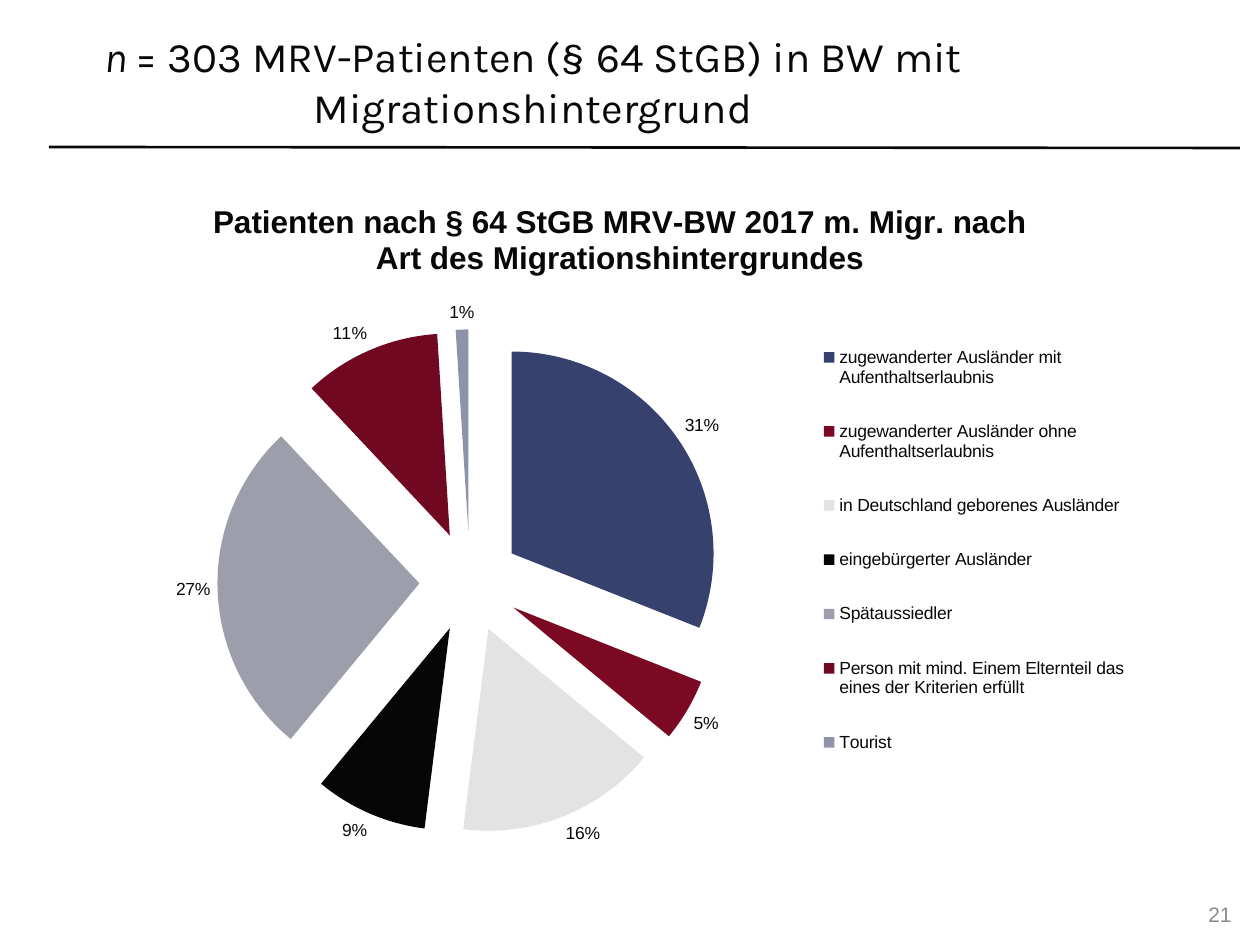
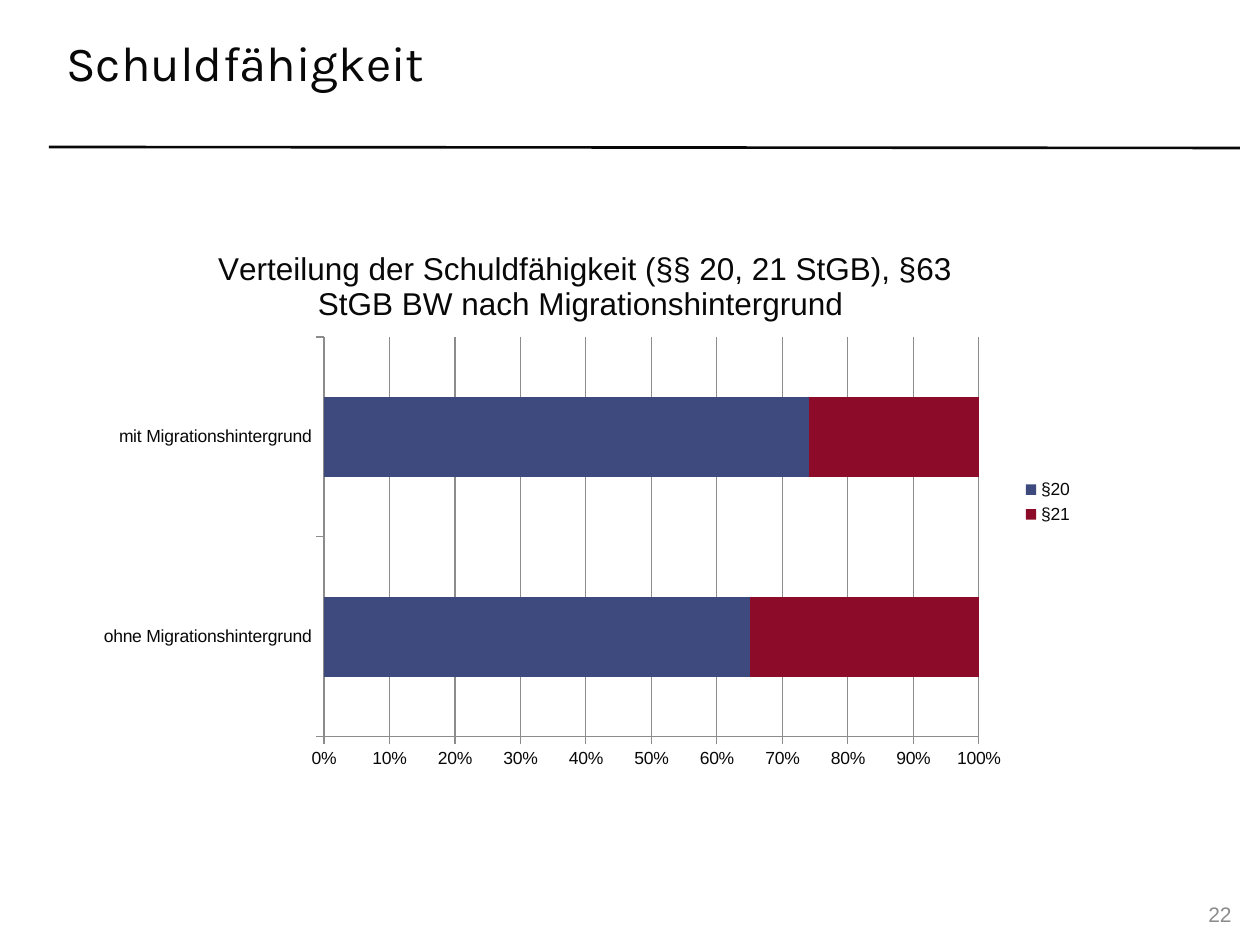
from lxml.etree import SubElement
from pptx import Presentation
from pptx.chart.data import CategoryChartData
from pptx.dml.color import RGBColor
from pptx.enum.chart import XL_CHART_TYPE, XL_LABEL_POSITION, XL_LEGEND_POSITION, XL_TICK_MARK
from pptx.enum.shapes import MSO_CONNECTOR
from pptx.enum.text import MSO_ANCHOR, PP_ALIGN
from pptx.oxml import parse_xml
from pptx.oxml.ns import nsdecls, qn
from pptx.util import Emu, Pt

INK = RGBColor(0x08, 0x08, 0x08)
GRAY = RGBColor(0x8C, 0x8C, 0x8C)
BLUE = RGBColor(0x3E, 0x4A, 0x7D)
RED = RGBColor(0x8C, 0x0B, 0x29)
SLICE_COLORS = [
    RGBColor(0x37, 0x41, 0x6E), RGBColor(0x7B, 0x09, 0x24), RGBColor(0xE3, 0xE3, 0xE3),
    RGBColor(0x06, 0x06, 0x06), RGBColor(0x9C, 0x9E, 0xAB), RGBColor(0x6F, 0x08, 0x20),
    RGBColor(0x8F, 0x93, 0xA9),
]
TITLE_FONT = "Karla"
BODY_FONT = "Arial"
PX_PER_INCH = 126
PIE_BOX = (94, 175, 1052, 694)
BARS_BOX = (84, 224, 1002, 556)


def px(*lengths):
    return [Emu(round(length * 914400 / PX_PER_INCH)) for length in lengths]


def place(parent, index, chart_box, x, y, w, h, inner=False):
    """Fix a plot area or legend at a place on the slide, given in px."""
    old = parent.find(qn("c:layout"))
    if old is not None:
        parent.remove(old)
    left, top, width, height = chart_box
    target = '<c:layoutTarget val="inner"/>' if inner else ""
    parent.insert(index, parse_xml(
        f'<c:layout {nsdecls("c")}><c:manualLayout>{target}'
        '<c:xMode val="edge"/><c:yMode val="edge"/>'
        f'<c:x val="{(x - left) / width:.4f}"/><c:y val="{(y - top) / height:.4f}"/>'
        f'<c:w val="{w / width:.4f}"/><c:h val="{h / height:.4f}"/>'
        '</c:manualLayout></c:layout>'))


prs = Presentation()
prs.slide_width, prs.slide_height = px(1260, 945)

# Chart data
origin_title = "Patienten nach § 64 StGB MRV-BW 2017 m. Migr. nach Art des Migrationshintergrundes"
origins = CategoryChartData(number_format="0%")
origins.categories = [
    "zugewanderter Ausländer mit Aufenthaltserlaubnis",
    "zugewanderter Ausländer ohne Aufenthaltserlaubnis",
    "in Deutschland geborenes Ausländer",
    "eingebürgerter Ausländer",
    "Spätaussiedler",
    "Person mit mind. Einem Elternteil das eines der Kriterien erfüllt",
    "Tourist",
]
origins.add_series(origin_title, [0.31, 0.05, 0.16, 0.09, 0.27, 0.11, 0.01])

culpability = CategoryChartData()
culpability.categories = ["ohne Migrationshintergrund", "mit Migrationshintergrund"]
culpability.add_series("§20", [65, 74])
culpability.add_series("§21", [35, 26])

# Title runs, title size, alignment, title box, chart type, data, chart box, chart title, bold
pages = [
    (["n ", "= 303 MRV-Patienten (§ 64 StGB) in BW mit Migrationshintergrund"], 24,
     PP_ALIGN.CENTER, (64, 45, 938, 72), XL_CHART_TYPE.PIE, origins,
     PIE_BOX, origin_title, True),
    (["Schuldfähigkeit"], 28,
     PP_ALIGN.LEFT, (54, 26, 938, 72), XL_CHART_TYPE.BAR_STACKED_100, culpability,
     BARS_BOX,
     "Verteilung der Schuldfähigkeit (§§ 20, 21 StGB), §63 StGB BW nach Migrationshintergrund ",
     False),
]

charts = []
for number, page in enumerate(pages, start=21):
    parts, size, align, title_box, kind, data, chart_box, heading, bold = page
    slide = prs.slides.add_slide(prs.slide_layouts[6])

    # Rule under the title
    rule = slide.shapes.add_connector(MSO_CONNECTOR.STRAIGHT, *px(1240, 148, 49, 147))
    rule.line.color.rgb = INK
    rule.line.width = Pt(1.5)
    SubElement(rule._element.spPr, qn("a:effectLst"))

    # Title
    title = slide.shapes.add_textbox(*px(*title_box)).text_frame
    title.word_wrap = True
    title.vertical_anchor = MSO_ANCHOR.MIDDLE
    title.paragraphs[0].alignment = align
    for part in parts:
        run = title.paragraphs[0].add_run()
        run.text = part
        run.font.name = TITLE_FONT
        run.font.size = Pt(size)
        run.font.color.rgb = INK
        run.font.italic = part == "n "

    # Page number
    footer = slide.shapes.add_textbox(*px(1194, 888, 50, 52)).text_frame
    footer.word_wrap = True
    footer.vertical_anchor = MSO_ANCHOR.MIDDLE
    footer.text = str(number)
    footer.paragraphs[0].alignment = PP_ALIGN.RIGHT
    page_font = footer.paragraphs[0].runs[0].font
    page_font.name = BODY_FONT
    page_font.size = Pt(12)
    page_font.color.rgb = GRAY

    # Chart with heading and legend
    chart = slide.shapes.add_chart(kind, *px(*chart_box), data).chart
    chart.font.name = BODY_FONT
    chart.font.size = Pt(10)
    chart.font.color.rgb = INK
    chart.has_title = True
    chart.chart_title.include_in_layout = False
    chart.chart_title.text_frame.text = heading
    heading_font = chart.chart_title.text_frame.paragraphs[0].runs[0].font
    heading_font.name = BODY_FONT
    heading_font.size = Pt(18)
    heading_font.bold = bold
    heading_font.color.rgb = INK
    chart.has_legend = True
    chart.legend.position = XL_LEGEND_POSITION.RIGHT
    chart.legend.include_in_layout = False
    charts.append(chart)

pie, bars = charts

# Exploded pie slices
place(pie._chartSpace.chart.plotArea, 0, PIE_BOX, 268, 380, 404, 404, inner=True)
place(pie.legend._element, 1, PIE_BOX, 816, 313, 316, 474)
slices = pie.plots[0].series[0]
for index, color in enumerate(SLICE_COLORS):
    fill = slices.points[index].format.fill
    fill.solid()
    fill.fore_color.rgb = color
for point in slices._element.findall(qn("c:dPt")):
    point.find(qn("c:spPr")).addprevious(parse_xml(f'<c:explosion {nsdecls("c")} val="25"/>'))
pie.plots[0].vary_by_categories = True
pie.plots[0].has_data_labels = True
shares = pie.plots[0].data_labels
shares.show_value = True
shares.show_percentage = False
shares.number_format = "0%"
shares.number_format_is_linked = False
shares.position = XL_LABEL_POSITION.OUTSIDE_END

# Stacked bars
place(bars._chartSpace.chart.plotArea, 0, BARS_BOX, 324, 337, 655, 400, inner=True)
bars.plots[0].gap_width = 150
bars.plots[0].overlap = 100
bars.plots[0].vary_by_categories = False
for series, color in zip(bars.plots[0].series, [BLUE, RED]):
    series.format.fill.solid()
    series.format.fill.fore_color.rgb = color
for axis in (bars.category_axis, bars.value_axis):
    axis.major_tick_mark = XL_TICK_MARK.OUTSIDE
    axis.minor_tick_mark = XL_TICK_MARK.NONE
    axis.format.line.color.rgb = GRAY
bars.value_axis.has_major_gridlines = True
bars.value_axis.major_gridlines.format.line.color.rgb = GRAY
bars.value_axis.maximum_scale = 1
bars.value_axis.minimum_scale = 0
bars.value_axis.major_unit = 0.1
bars.value_axis.tick_labels.number_format = "0%"
bars.value_axis.tick_labels.number_format_is_linked = False

prs.save("out.pptx")
